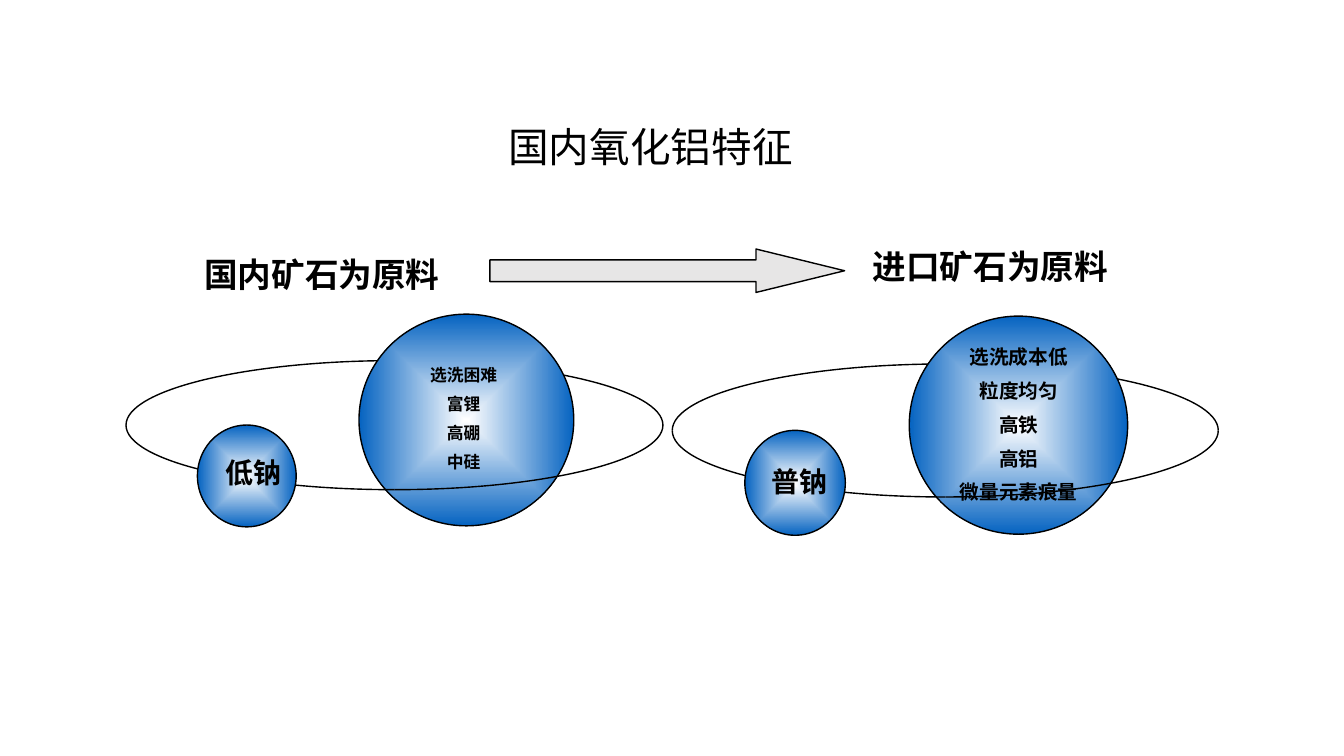
from lxml.etree import SubElement
from pptx import Presentation
from pptx.dml.color import RGBColor
from pptx.enum.shapes import MSO_SHAPE as Shape
from pptx.enum.text import PP_ALIGN as Align
from pptx.oxml.ns import qn
from pptx.util import Pt

BLACK, WHITE, BLUE, GREY = "000000", "FFFFFF", "0563C1", "E7E6E6"
CURVE = 0.55  # control point distance for a quarter of an ellipse


def color(value):
    return RGBColor.from_string(value)


def add_text(slide, box, text, size, font="Arial", bold=True, inset=True,
             line_spacing=None):
    frame = slide.shapes.add_textbox(*map(Pt, box)).text_frame
    frame.word_wrap = True
    if not inset:
        frame.margin_left = frame.margin_right = 0
        frame.margin_top = frame.margin_bottom = 0
    for index, line in enumerate(text.split("\n")):
        paragraph = frame.paragraphs[0] if index == 0 else frame.add_paragraph()
        paragraph.alignment = Align.CENTER
        paragraph.line_spacing = line_spacing
        if index:
            paragraph.space_before = Pt(round(size * 0.52, 1))
        run = paragraph.add_run()
        run.text = line
        run.font.size = Pt(size)
        run.font.name = font
        run.font.bold = bold
        run.font.color.rgb = color(BLACK)


def outline(shape):
    shape.shadow.inherit = False
    shape.line.color.rgb = color(BLACK)
    shape.line.width = Pt(1)


def add_sphere(shapes, box):
    sphere = shapes.add_shape(Shape.OVAL, *map(Pt, box))
    outline(sphere)
    sphere.fill.gradient()
    for stop, value in zip(sphere.fill.gradient_stops, (WHITE, BLUE)):
        stop.color.rgb = color(value)
    # Radiate from the centre instead of along a line
    gradient = sphere._element.spPr.find(qn("a:gradFill"))
    gradient.remove(gradient.find(qn("a:lin")))
    path = SubElement(gradient, qn("a:path"), {"path": "shape"})
    SubElement(path, qn("a:fillToRect"), dict.fromkeys("ltrb", "50000"))


def add_quarter(shapes, box, side, level):
    """Curve from the top or bottom (level) to the left or right (side)."""
    left, top, width, height = box
    middle_x, middle_y = left + width / 2, top + height / 2
    builder = shapes.build_freeform(Pt(middle_x), Pt(middle_y + level * height / 2))
    builder.add_line_segments(
        [(Pt(middle_x + side * width / 2), Pt(middle_y))], close=False)
    arc = builder.convert_to_shape()
    arc.fill.background()
    outline(arc)

    # Bend the straight segment into a curve
    move, segment = next(arc._element.iter(qn("a:path")))
    (x1, y1), (x2, y2) = ((int(node[0].get("x")), int(node[0].get("y")))
                          for node in (move, segment))
    segment.tag = qn("a:cubicBezTo")
    segment.remove(segment[0])
    for x, y in ((x1 + (x2 - x1) * CURVE, y1),
                 (x2, y2 + (y1 - y2) * CURVE), (x2, y2)):
        SubElement(segment, qn("a:pt"), x=str(round(x)), y=str(round(y)))


def add_orbit(slide, box, traits, traits_box, trait_size, label, label_box):
    """Place an orbit with two spheres; text boxes are offsets from box."""
    left, top, width, height = box

    def part(x, y, w, h):
        """Turn percentages of the orbit into a box."""
        return (left + x * width / 100, top + y * height / 100,
                w * width / 100, h * height / 100)

    # The upper half passes behind the large sphere, the lower half in front
    shapes = slide.shapes.add_group_shape().shapes
    for level, sphere in ((-1, part(43.4, -36, 40, 164)),
                          (1, part(13.3, 49.9, 18.4, 78.9))):
        for side in (-1, 1):
            add_quarter(shapes, box, side, level)
        add_sphere(shapes, sphere)

    for text, (x, y, w, h), size in ((traits, traits_box, trait_size),
                                     (label, label_box, 20)):
        add_text(slide, (left + x, top + y, w, h), text, size)


def add_header(slide, box):
    """Place the title, the arrow and the two headings."""
    left, top, width, height = box
    add_text(slide, (left + 104.4, top, 463, 36.7), "国内氧化铝特征", 29,
             font="Calibri", bold=False, inset=False, line_spacing=0.85)

    arrow = slide.shapes.add_shape(
        Shape.RIGHT_ARROW, Pt(left + 221), Pt(top + 85.7), Pt(253.4), Pt(31))
    outline(arrow)
    arrow.adjustments[0], arrow.adjustments[1] = 0.5, 2.04
    arrow.fill.solid()
    arrow.fill.fore_color.rgb = color(GREY)

    add_text(slide, (left + 0.3, top + 85.6, 201.6, 36), "国内矿石为原料", 24)
    add_text(slide, (left + width - 208, top + 79.9, 208, 36), "进口矿石为原料", 24)


def main():
    presentation = Presentation()
    presentation.slide_width, presentation.slide_height = Pt(960), Pt(540)
    slide = presentation.slides.add_slide(presentation.slide_layouts[6])

    add_header(slide, (128.9, 92.2, 682.5, 122))
    # Domestic ore
    add_orbit(slide, (90, 257.6, 383.5, 92.2),
              "选洗困难\n富锂\n高硼\n中硅", (182.9, -0.6, 116.6, 86.4), 12,
              "低钠", (45.8, 64.2, 90.7, 31))
    # Imported ore
    add_orbit(slide, (480.2, 260, 390, 95),
              "选洗成本低\n粒度均匀\n高铁\n高铝\n微量元素痕量",
              (185.6, -17, 123.8, 149.8), 14,
              "普钠", (51.9, 68.3, 77.8, 31))
    presentation.save("out.pptx")


if __name__ == "__main__":
    main()
